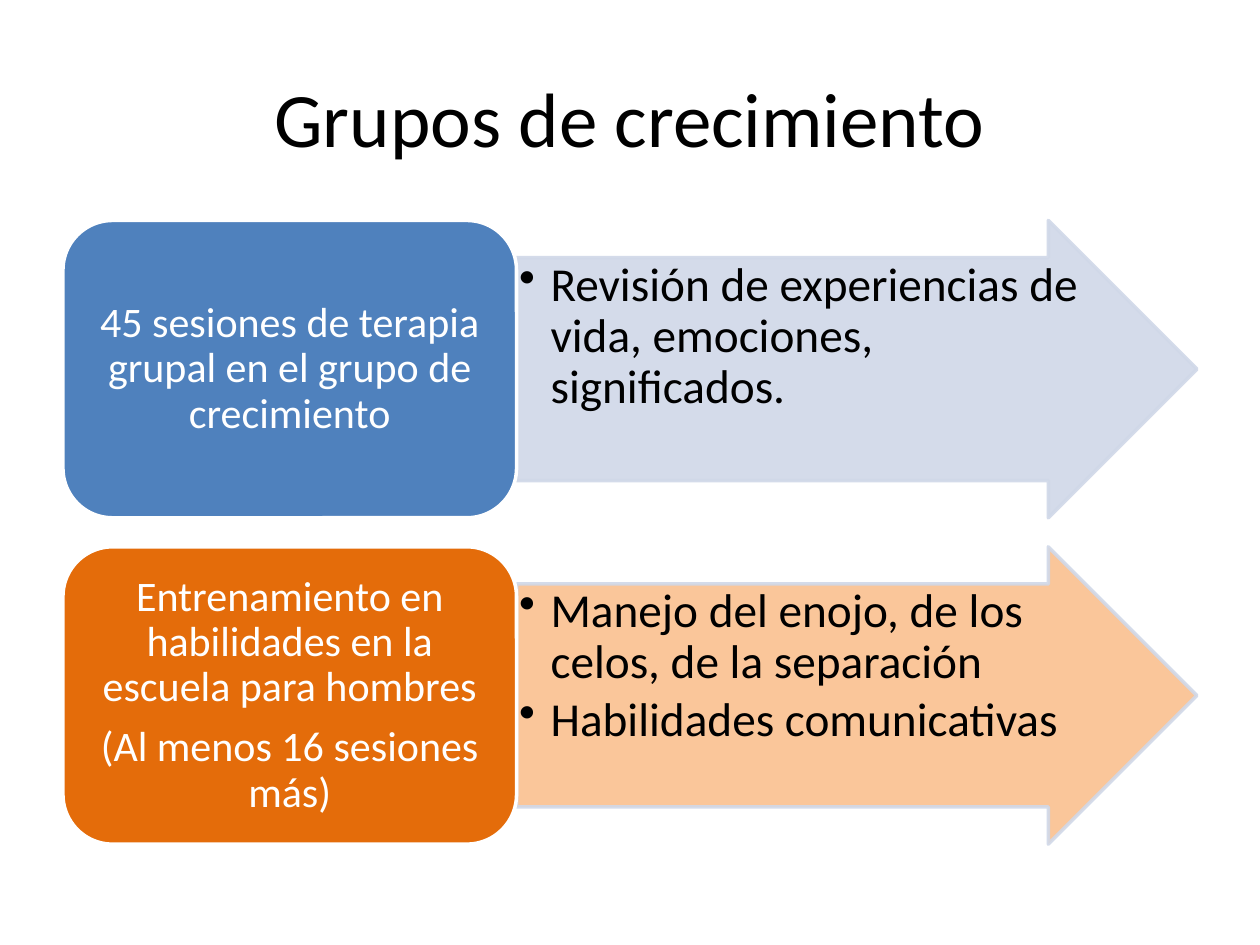
from dataclasses import dataclass

from lxml import etree
from pptx import Presentation
from pptx.dml.color import RGBColor
from pptx.enum.shapes import MSO_SHAPE
from pptx.enum.text import MSO_ANCHOR, PP_ALIGN
from pptx.oxml.ns import qn
from pptx.util import Inches, Pt

ROUNDED, ARROW = MSO_SHAPE.ROUNDED_RECTANGLE, MSO_SHAPE.RIGHT_ARROW
TOP, MIDDLE = MSO_ANCHOR.TOP, MSO_ANCHOR.MIDDLE
LEFT, CENTER = PP_ALIGN.LEFT, PP_ALIGN.CENTER

BLACK = RGBColor(0x00, 0x00, 0x00)
WHITE = RGBColor(0xFF, 0xFF, 0xFF)
BLUE = RGBColor(0x4F, 0x81, 0xBD)
PALE_BLUE = RGBColor(0xD0, 0xD8, 0xE8)
ORANGE = RGBColor(0xE4, 0x6C, 0x0A)
PALE_ORANGE = RGBColor(0xFA, 0xC0, 0x90)

FONT = "Calibri"
STAGE_LEFT, STAGE_TOP = 0.5, 1.75
LABEL_WIDTH, ARROW_WIDTH = 3.6, 5.4
STAGE_HEIGHT, STAGE_PITCH = 2.36, 2.59


@dataclass(frozen=True)
class Stage:
    label: str
    topics: str
    label_color: RGBColor
    arrow_color: RGBColor


STAGES = [
    Stage("45 sesiones de terapia grupal en el grupo de crecimiento",
          "Revisión de experiencias de vida, emociones, significados.",
          BLUE, PALE_BLUE),
    Stage("Entrenamiento en habilidades en la escuela para hombres\n"
          "(Al menos 16 sesiones más)",
          "Manejo del enojo, de los celos, de la separación\n"
          "Habilidades comunicativas",
          ORANGE, PALE_ORANGE),
]


def add_block(slide, kind, left: float, top: float, width: float,
              fill: RGBColor, line: RGBColor):
    block = slide.shapes.add_shape(kind, Inches(left), Inches(top),
                                   Inches(width), Inches(STAGE_HEIGHT))
    block.shadow.inherit = False
    block.fill.solid()
    block.fill.fore_color.rgb = fill
    block.line.color.rgb = line
    block.line.width = Pt(2)
    return block


def make_translucent(shape, percent: int) -> None:
    for color in shape._element.spPr.iter(qn("a:srgbClr")):
        etree.SubElement(color, qn("a:alpha"), val=str(percent * 1000))


def add_bullet(paragraph) -> None:
    properties = paragraph._p.get_or_add_pPr()
    properties.set("marL", str(Inches(0.25)))
    properties.set("indent", str(-Inches(0.25)))
    etree.SubElement(properties, qn("a:buChar"), char="•")


def write(shape, text: str, size: float, color: RGBColor, anchor, align,
          space_after: float, bulleted: bool = False) -> None:
    frame = shape.text_frame
    frame.word_wrap = True
    frame.vertical_anchor = anchor
    frame.text = text
    for paragraph in frame.paragraphs:
        paragraph.alignment = align
        paragraph.line_spacing = 0.9
        paragraph.space_after = Pt(space_after)
        if bulleted:
            paragraph.level = 1
            add_bullet(paragraph)
        for run in paragraph.runs:
            run.font.name = FONT
            run.font.size = Pt(size)
            run.font.color.rgb = color


def add_stage(slide, stage: Stage, top: float) -> None:
    arrow = add_block(slide, ARROW, STAGE_LEFT + LABEL_WIDTH, top, ARROW_WIDTH,
                      stage.arrow_color, PALE_BLUE)
    arrow.adjustments[0] = 0.75
    arrow.adjustments[1] = 0.5
    make_translucent(arrow, 90)
    frame = arrow.text_frame
    frame.margin_left = frame.margin_right = Inches(0.02)
    frame.margin_top = frame.margin_bottom = Inches(0.02)
    write(arrow, stage.topics, 27, BLACK, TOP, LEFT, 4, bulleted=True)

    label = add_block(slide, ROUNDED, STAGE_LEFT, top, LABEL_WIDTH,
                      stage.label_color, WHITE)
    write(label, stage.label, 24, WHITE, MIDDLE, CENTER, 8.4)


def add_title(slide, text: str) -> None:
    title = slide.shapes.title
    title.left, title.top = Inches(0.5), Inches(0.3)
    title.width, title.height = Inches(9), Inches(1.25)
    title.text_frame.text = text
    title.text_frame.vertical_anchor = MIDDLE
    paragraph = title.text_frame.paragraphs[0]
    paragraph.alignment = CENTER
    font = paragraph.runs[0].font
    font.name, font.size = FONT, Pt(44)
    font.color.rgb = BLACK


def main() -> None:
    presentation = Presentation()
    presentation.slide_width = Inches(10)
    presentation.slide_height = Inches(7.5)
    slide = presentation.slides.add_slide(presentation.slide_layouts[5])
    add_title(slide, "Grupos de crecimiento")
    for row, stage in enumerate(STAGES):
        add_stage(slide, stage, STAGE_TOP + row * STAGE_PITCH)
    presentation.save("out.pptx")


if __name__ == "__main__":
    main()
